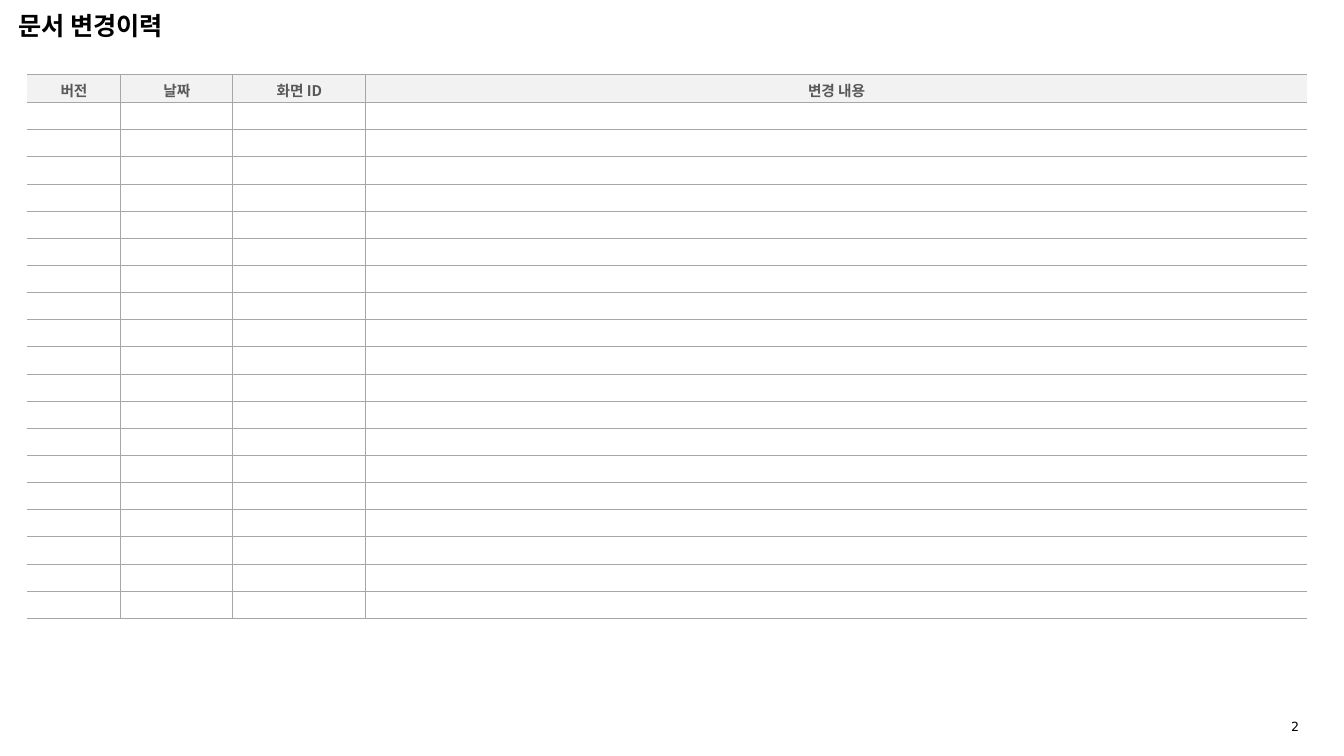
from pptx import Presentation
from pptx.dml.color import RGBColor
from pptx.enum.text import MSO_ANCHOR, PP_ALIGN
from pptx.oxml.ns import qn
from pptx.util import Pt
from lxml import etree

LEFT, CENTER = PP_ALIGN.LEFT, PP_ALIGN.CENTER
MIDDLE = MSO_ANCHOR.MIDDLE
KOREAN_FONT, NUMBER_FONT = "Noto Sans CJK KR", "DejaVu Sans"
BLACK, WHITE, GRID, HEADER_FILL, HEADER_TEXT = (
    "000000", "FFFFFF", "A6A6A6", "F2F2F2", "595959")
HEADINGS = ["버전", "날짜", "화면 ID", "변경 내용"]
COLUMN_WIDTHS = [67, 80, 95, 672.4]
HEADER_HEIGHT, ENTRY_HEIGHT, ENTRY_COUNT = 20, 19.4, 19


def color(hex_value):
    """Return the colour for a hex string."""
    return RGBColor.from_string(hex_value)


def write(frame, text, face, size, ink, bold=False, align=LEFT):
    """Fill a text frame with one formatted paragraph."""
    frame.text = text
    paragraph = frame.paragraphs[0]
    paragraph.alignment = align
    font = paragraph.font
    font.name, font.size, font.bold = face, Pt(size), bold
    font.color.rgb = color(ink)
    defaults = paragraph._p.pPr.find(qn("a:defRPr"))
    etree.SubElement(defaults, qn("a:ea"), typeface=face)


def set_margins(area, left, top, right, bottom):
    """Set the four inner margins of a cell or text frame."""
    area.margin_left, area.margin_top = Pt(left), Pt(top)
    area.margin_right, area.margin_bottom = Pt(right), Pt(bottom)


def set_borders(cell, widths):
    """Draw the cell borders; a width of zero hides that side."""
    properties = cell._tc.get_or_add_tcPr()
    for position, (side, width) in enumerate(widths.items()):
        line = etree.Element(qn(f"a:ln{side}"), w=str(Pt(width)))
        if width:
            fill = etree.SubElement(line, qn("a:solidFill"))
            etree.SubElement(fill, qn("a:srgbClr"), val=GRID)
        else:
            etree.SubElement(line, qn("a:noFill"))
        properties.insert(position, line)


def add_title(slide, left, top, width, height):
    """Place the slide title in the given box."""
    title = slide.shapes.title
    title.left, title.top = Pt(left), Pt(top)
    title.width, title.height = Pt(width), Pt(height)
    frame = title.text_frame
    frame.vertical_anchor = MIDDLE
    set_margins(frame, 7.2, 0, 7.2, 0)
    write(frame, "문서 변경이력", KOREAN_FONT, 18, BLACK, bold=True)


def add_history_table(slide, left, top):
    """Place the revision history table with its empty entry rows."""
    heights = [HEADER_HEIGHT] + [ENTRY_HEIGHT] * ENTRY_COUNT
    history = slide.shapes.add_table(
        len(heights), len(HEADINGS), Pt(left), Pt(top),
        Pt(sum(COLUMN_WIDTHS)), Pt(sum(heights))).table
    history.first_row = history.horz_banding = False
    for column, width in zip(history.columns, COLUMN_WIDTHS):
        column.width = Pt(width)
    last = len(HEADINGS) - 1
    for row_index, height in enumerate(heights):
        history.rows[row_index].height = Pt(height)
        is_header = row_index == 0
        for column_index, heading in enumerate(HEADINGS):
            cell = history.cell(row_index, column_index)
            cell.vertical_anchor = MIDDLE
            cell.fill.solid()
            cell.fill.fore_color.rgb = color(HEADER_FILL if is_header else WHITE)
            set_margins(cell, 7.2, 3.6, 7.2, 1)
            if is_header:
                write(cell.text_frame, heading, KOREAN_FONT, 10.5,
                      HEADER_TEXT, bold=True, align=CENTER)
            else:
                paragraph = cell.text_frame.paragraphs[0]._p
                etree.SubElement(paragraph, qn("a:endParaRPr"), sz="900")
            set_borders(cell, {
                "L": 0.75 if column_index else 0,
                "R": 0.75 if column_index < last else 0,
                "T": 1 if is_header else 0.75,
                "B": 0.75})


def add_page_number(slide, left, top, width, height):
    """Place the page number in the given box."""
    number = slide.shapes.add_textbox(Pt(left), Pt(top), Pt(width), Pt(height))
    frame = number.text_frame
    frame.word_wrap = True
    set_margins(frame, 6.5, 3.6, 6.5, 3.6)
    write(frame, "2", NUMBER_FONT, 9, BLACK)


def main():
    """Build the document history slide and save it."""
    deck = Presentation()
    deck.slide_width, deck.slide_height = Pt(960), Pt(540)
    slide = deck.slides.add_slide(deck.slide_layouts[5])
    add_title(slide, 5.8, 3.6, 183.6, 28.8)
    add_history_table(slide, 19.4, 53.3)
    add_page_number(slide, 915.8, 509.8, 28.8, 17.3)
    deck.save("out.pptx")


if __name__ == "__main__":
    main()
